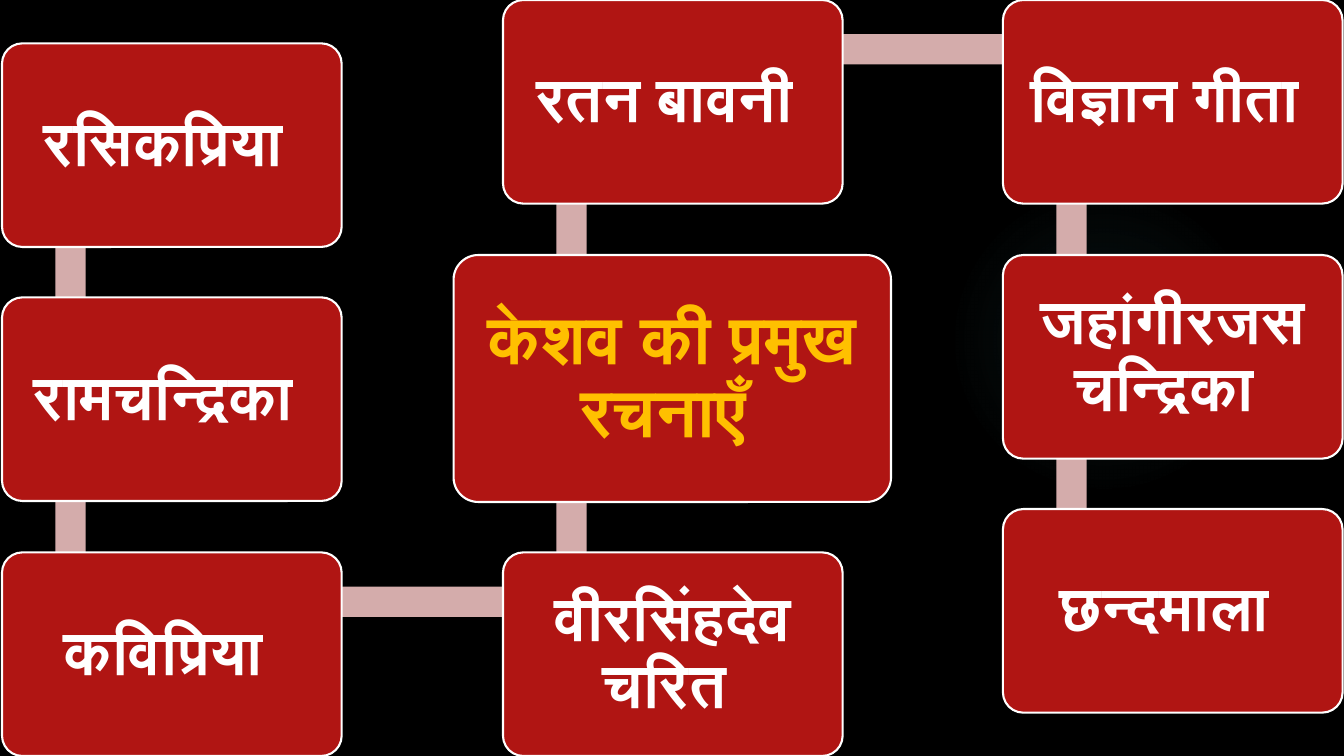
"""Draw a winding chain of cards naming the chief works of Keshav."""
from dataclasses import dataclass
from itertools import zip_longest

from lxml.etree import SubElement
from pptx import Presentation
from pptx.dml.color import RGBColor as Rgb
from pptx.enum.shapes import MSO_SHAPE as Kind
from pptx.enum.text import MSO_ANCHOR as Anchor, PP_ALIGN as Align
from pptx.oxml import parse_xml
from pptx.oxml.ns import nsdecls, qn
from pptx.shapes.autoshape import Shape
from pptx.slide import Slide
from pptx.util import Emu, Pt

PX = 9144


@dataclass(frozen=True)
class Theme:
    back: Rgb = Rgb(0, 0, 0)
    card: Rgb = Rgb(0xB0, 0x15, 0x13)
    bar: Rgb = Rgb(0xD4, 0xAC, 0xAB)
    white: Rgb = Rgb(0xFF, 0xFF, 0xFF)
    gold: Rgb = Rgb(0xFF, 0xC0, 0x00)
    glow: str = "50B9C1"
    font: str = "League Spartan"
    size: int = 44
    big: int = 48
    rim: float = 1.5


@dataclass(frozen=True)
class Card:
    text: str
    mid_x: int
    mid_y: int
    wide: int = 337
    high: int = 202
    inset: int = 18
    size: int = Theme.size
    ink: Rgb = Theme.white

    def joint(self) -> tuple[int, int]:
        return self.mid_x - 100, self.mid_y - 52


LEFT, MID, RIGHT = 170, 667, 1163
CARDS = [
    Card("रसिकप्रिया ", LEFT, 144),
    Card("रामचन्द्रिका ", LEFT, 396),
    Card("कविप्रिया ", LEFT, 649),
    Card("वीरसिंहदेव चरित ", MID, 649),
    Card("केशव की प्रमुख रचनाएँ ", MID, 375, 434, 245, 20, Theme.big, Theme.gold),
    Card("रतन बावनी ", MID, 101),
    Card("विज्ञान गीता ", RIGHT, 101),
    Card("जहांगीरजसचन्द्रिका ", RIGHT, 354),
    Card("छन्दमाला ", RIGHT, 606),
]


def add_block(slide: Slide, kind: Kind, box: tuple[int, int, int, int], fill: Rgb) -> Shape:
    shape = slide.shapes.add_shape(kind, *(Emu(n * PX) for n in box))
    shape.shadow.inherit = False
    shape.fill.solid()
    shape.fill.fore_color.rgb = fill
    shape.line.fill.background()
    return shape


def add_glow(slide: Slide) -> None:
    shape = add_block(slide, Kind.OVAL, (941, 183, 308, 308), Theme.back)
    stops = "".join(
        f'<a:gs pos="{pos}000"><a:srgbClr val="{Theme.glow}">'
        f'<a:alpha val="{alpha}000"/></a:srgbClr></a:gs>'
        for pos, alpha in ((0, 7), (36, 6), (69, 0))
    )
    grad = parse_xml(
        f'<a:gradFill {nsdecls("a")}><a:gsLst>{stops}</a:gsLst><a:path path="circle">'
        '<a:fillToRect l="50000" t="50000" r="50000" b="50000"/></a:path></a:gradFill>'
    )
    props = shape.element.spPr
    props.replace(props.find(qn("a:solidFill")), grad)


def add_bar(slide: Slide, start: Card, end: Card, thick: int = 30) -> None:
    (x1, y1), (x2, y2) = start.joint(), end.joint()
    wide, high = abs(x2 - x1) or thick, abs(y2 - y1) or thick
    box = ((x1 + x2 - wide) // 2, (y1 + y2 - high) // 2, wide, high)
    add_block(slide, Kind.RECTANGLE, box, Theme.bar)


def add_card(slide: Slide, card: Card) -> None:
    box = (card.mid_x - card.wide // 2, card.mid_y - card.high // 2, card.wide, card.high)
    shape = add_block(slide, Kind.ROUNDED_RECTANGLE, box, Theme.card)
    shape.adjustments[0] = 0.1
    shape.line.color.rgb = Theme.white
    shape.line.width = Pt(Theme.rim)
    frame = shape.text_frame
    frame.word_wrap = True
    frame.vertical_anchor = Anchor.MIDDLE
    frame.margin_left = frame.margin_right = Emu(card.inset * PX)
    frame.margin_top = frame.margin_bottom = Emu(card.inset * PX)
    frame.text = card.text
    para = frame.paragraphs[0]
    para.alignment = Align.CENTER
    para.line_spacing = 0.9
    for run in para.runs:
        font = run.font
        font.name, font.size, font.bold = Theme.font, Pt(card.size), True
        font.color.rgb = card.ink
        SubElement(run._r.get_or_add_rPr(), qn("a:cs"), typeface=Theme.font)


def main() -> None:
    deck = Presentation()
    deck.slide_width, deck.slide_height = Emu(12192000), Emu(750 * PX)
    slide = deck.slides.add_slide(deck.slide_layouts[6])
    fill = slide.background.fill
    fill.solid()
    fill.fore_color.rgb = Theme.back
    add_glow(slide)
    for card, after in zip_longest(CARDS, CARDS[1:]):
        if after:
            add_bar(slide, card, after)
        add_card(slide, card)
    deck.save("out.pptx")


if __name__ == "__main__":
    main()
